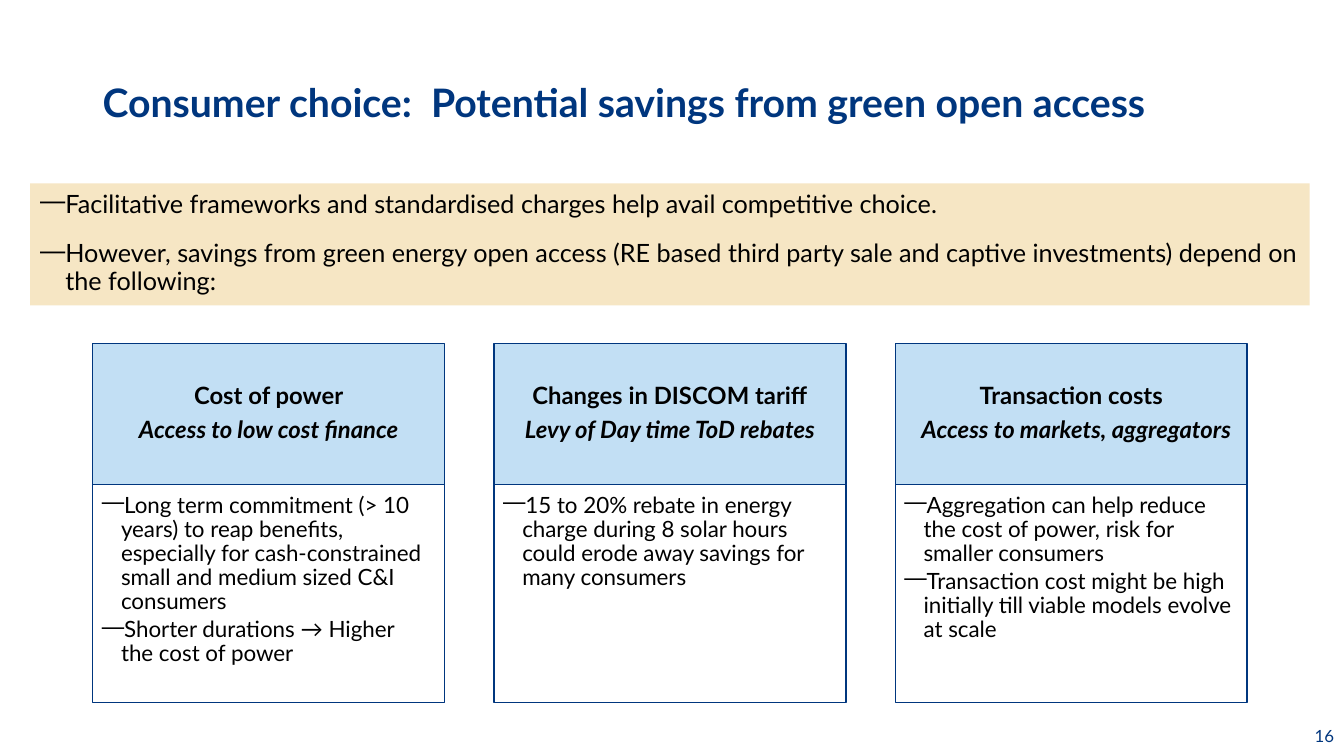
from lxml import etree
from pptx import Presentation
from pptx.dml.color import RGBColor
from pptx.enum.shapes import MSO_SHAPE as Shape
from pptx.enum.text import MSO_ANCHOR as Anchor, PP_ALIGN as Align
from pptx.oxml.ns import qn
from pptx.util import Inches, Pt

# Content
TITLE = "Consumer choice:  Potential savings from green open access"
POINTS = [
    "Facilitative frameworks and standardised charges help avail competitive choice.",
    "However, savings from green energy open access (RE based third party sale "
    "and captive investments) depend on the following:",
]
# Heading, subheading, indent of the subheading, points
CARDS = [
    ("Cost of power", "Access to low cost finance", 0, [
        "Long term commitment (> 10 years) to reap benefits, especially for "
        "cash-constrained small and medium sized C&I consumers",
        "Shorter durations → Higher the cost of power"]),
    ("Changes in DISCOM tariff", "Levy of Day time ToD rebates", 0, [
        "15 to 20% rebate in energy charge during 8 solar hours could erode "
        "away savings for many consumers"]),
    ("Transaction costs", "Access to markets, aggregators", 0.1, [
        "Aggregation can help reduce the cost of power, risk for smaller consumers",
        "Transaction cost might be high initially till viable models evolve at scale"]),
]
PAGE = "16"

# Style and layout
FONT = "Lato"
NAVY = RGBColor(0x00, 0x36, 0x7E)
SAND = RGBColor(0xF6, 0xE6, 0xC4)
SKY = RGBColor(0xC2, 0xDF, 0xF4)
WHITE = RGBColor(0xFF, 0xFF, 0xFF)
BLACK = RGBColor(0x00, 0x00, 0x00)
LEFT, STEP, WIDE = 0.92, 3.98, 3.49
TOP, HEAD, BODY = 3.41, 1.4, 2.16
PAD = (0.1, 0.05, 0.1, 0.05)


def set_frame(shape, pad=PAD, anchor=Anchor.TOP):
    frame = shape.text_frame
    frame.word_wrap = True
    frame.vertical_anchor = anchor
    (frame.margin_left, frame.margin_top,
     frame.margin_right, frame.margin_bottom) = [Inches(n) for n in pad]
    return frame


def add_label(slide, box, anchor=Anchor.MIDDLE):
    return set_frame(slide.shapes.add_textbox(*[Inches(n) for n in box]), PAD, anchor)


def add_box(slide, box, fill, line=None, pad=PAD, anchor=Anchor.TOP):
    shape = slide.shapes.add_shape(Shape.RECTANGLE, *[Inches(n) for n in box])
    shape.shadow.inherit = False
    shape.fill.solid()
    shape.fill.fore_color.rgb = fill
    if line is None:
        shape.line.fill.background()
    else:
        shape.line.color.rgb = line
        shape.line.width = Pt(1)
    return set_frame(shape, pad, anchor)


def add_para(frame, text, size, color=BLACK, bold=False, italic=False,
             align=Align.LEFT, indent=0, dash=False, lead=0.9, before=0, after=0):
    first = not frame.paragraphs[0].runs
    para = frame.paragraphs[0] if first else frame.add_paragraph()
    props = para._p.get_or_add_pPr()
    props.set("marL", str(Inches(indent)))
    if dash:
        props.set("indent", str(-Inches(indent)))
        etree.SubElement(props, qn("a:buChar")).set("char", "—")
    para.alignment = align
    para.line_spacing = lead
    para.space_before = Pt(0 if first else before)
    para.space_after = Pt(after)
    run = para.add_run()
    run.text = text
    font = run.font
    font.name, font.size, font.bold, font.italic = FONT, Pt(size), bold, italic
    font.color.rgb = color


def main():
    deck = Presentation()
    deck.slide_width, deck.slide_height = Inches(13.33), Inches(7.5)
    slide = deck.slides.add_slide(deck.slide_layouts[6])

    # Title
    add_para(add_label(slide, (0.92, 0.64, 11.5, 0.8)), TITLE, 28, NAVY, bold=True)

    # Introductory band
    band = add_box(slide, (0.3, 1.82, 12.69, 1.21), SAND)
    for text, lead, after in zip(POINTS, (1, 0.9), (6, 0)):
        add_para(band, text, 18, indent=0.25, dash=True, lead=lead,
                 before=10, after=after)

    # Three cards
    for i, (name, sub, shift, points) in enumerate(CARDS):
        x = LEFT + i * STEP
        head = add_box(slide, (x, TOP, WIDE, HEAD), SKY, NAVY,
                       (0.13, 0.08, 0.13, 0.08), Anchor.MIDDLE)
        add_para(head, name, 17, bold=True, align=Align.CENTER, after=6)
        add_para(head, sub, 17, bold=True, italic=True, align=Align.CENTER,
                 indent=shift, after=6)
        body = add_box(slide, (x, TOP + HEAD, WIDE, BODY), WHITE, NAVY,
                       (0.09, 0.09, 0.12, 0.14))
        for text in points:
            add_para(body, text, 16, indent=0.19, dash=True, after=2.4)

    # Page number
    add_para(add_label(slide, (10.33, 7.1, 3, 0.4)), PAGE, 12, NAVY,
             align=Align.RIGHT, lead=1)

    deck.save("out.pptx")


if __name__ == "__main__":
    main()
